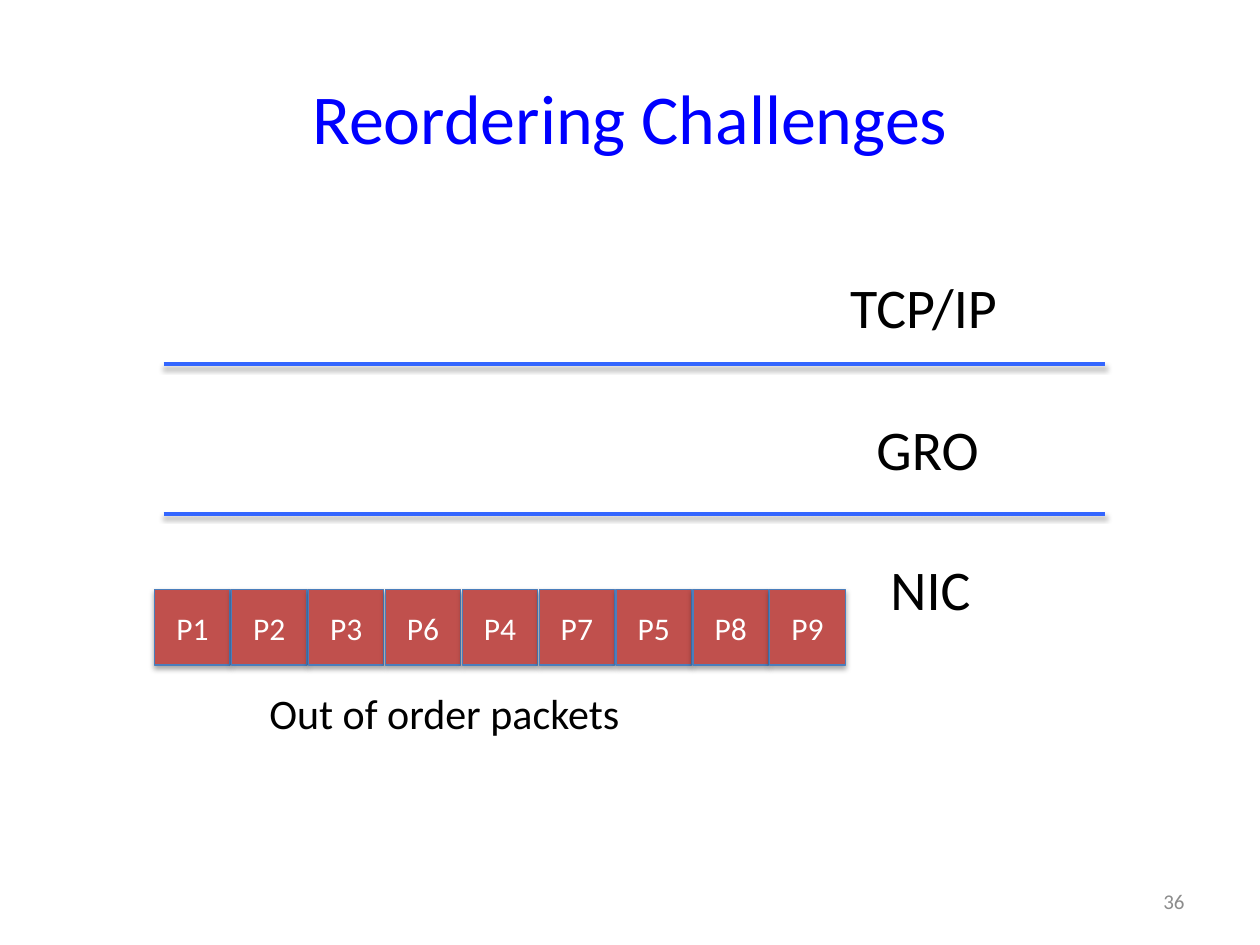
from lxml.etree import SubElement
from pptx import Presentation
from pptx.dml.color import RGBColor
from pptx.enum.shapes import MSO_CONNECTOR, MSO_SHAPE
from pptx.enum.text import MSO_ANCHOR, PP_ALIGN
from pptx.oxml.ns import qn
from pptx.util import Cm, Pt


def style_text(tf, size, color, align):
    p = tf.paragraphs[0]
    p.alignment = align
    font = p.runs[0].font
    font.name, font.size = "Calibri", Pt(size)
    font.color.rgb = RGBColor.from_string(color)


def add_shadow(s, alpha, dist):
    """Give a shape or connector a soft black shadow straight below it."""
    effects = SubElement(s._element.spPr, qn("a:effectLst"))
    shadow = SubElement(effects, qn("a:outerShdw"), blurRad=str(Pt(3.1)),
                        dist=str(Pt(dist)), dir="5400000", rotWithShape="0")
    black = SubElement(shadow, qn("a:srgbClr"), val="000000")
    SubElement(black, qn("a:alpha"), val=str(alpha * 1000))


prs = Presentation()
prs.slide_width, prs.slide_height = Cm(25.4), Cm(19.05)
slide = prs.slides.add_slide(prs.slide_layouts[5])

title = slide.shapes.title
title.left, title.top, title.width, title.height = Cm(1.27), Cm(0.76), Cm(22.86), Cm(3.18)
title.text_frame.text = "Reordering Challenges"
title.text_frame.vertical_anchor = MSO_ANCHOR.MIDDLE
style_text(title.text_frame, 40, "0000FF", PP_ALIGN.CENTER)

# Packets in order of arrival
packet_left, packet_pitch, packet_size = 3.12, 1.55, 1.52
for i, number in enumerate([1, 2, 3, 6, 4, 7, 5, 8, 9]):
    s = slide.shapes.add_shape(MSO_SHAPE.RECTANGLE, Cm(packet_left + i * packet_pitch),
                               Cm(11.89), Cm(packet_size), Cm(packet_size))
    s.fill.solid()
    s.fill.fore_color.rgb = RGBColor.from_string("C0504D")
    s.line.color.rgb = RGBColor.from_string("4B7EBC")
    s.line.width = Pt(0.75)
    add_shadow(s, 35, 1.8)
    tf = s.text_frame
    tf.text = f"P{number}"
    tf.margin_left = tf.margin_right = 0
    tf.vertical_anchor = MSO_ANCHOR.MIDDLE
    style_text(tf, 18, "FFFFFF", PP_ALIGN.CENTER)

# Borders between the layers of the stack
for y in (7.34, 10.36):
    border = slide.shapes.add_connector(MSO_CONNECTOR.STRAIGHT, Cm(3.3), Cm(y), Cm(22.28), Cm(y))
    border.line.color.rgb = RGBColor.from_string("3366FF")
    border.line.width = Pt(2)
    add_shadow(border, 38, 1.6)

# Layer names, caption and slide number
labels = [
    ("TCP/IP", 16.89, 5.36, 3.58, 1.63, 32, "000000", PP_ALIGN.LEFT),
    ("GRO", 17.42, 8.23, 2.62, 1.63, 32, "000000", PP_ALIGN.LEFT),
    ("NIC", 17.7, 11.05, 2.13, 1.63, 32, "000000", PP_ALIGN.LEFT),
    ("Out of order packets", 5.18, 13.74, 7.67, 1.27, 24, "000000", PP_ALIGN.LEFT),
    ("36", 18.21, 17.65, 5.92, 1.02, 12, "8C8C8C", PP_ALIGN.RIGHT),
]
for text, left, top, width, height, size, color, align in labels:
    sp = slide.shapes.add_textbox(Cm(left), Cm(top), Cm(width), Cm(height))
    tf = sp.text_frame
    tf.text = text
    tf.word_wrap = align == PP_ALIGN.RIGHT
    tf.vertical_anchor = MSO_ANCHOR.MIDDLE if align == PP_ALIGN.RIGHT else MSO_ANCHOR.TOP
    style_text(tf, size, color, align)

prs.save("out.pptx")
